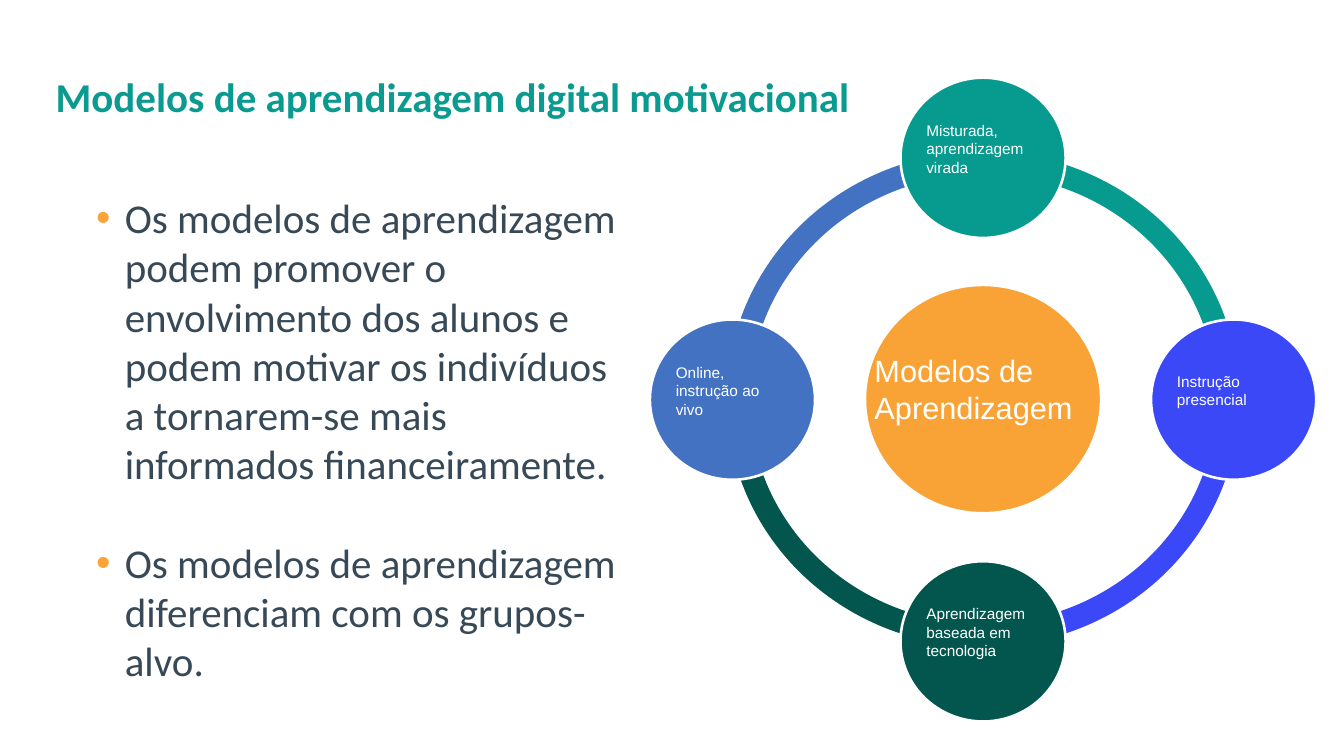
from dataclasses import dataclass

from lxml.etree import SubElement
from pptx import Presentation
from pptx.dml.color import RGBColor
from pptx.enum.shapes import MSO_SHAPE as Shape
from pptx.enum.text import MSO_ANCHOR as Anchor
from pptx.oxml.ns import qn
from pptx.util import Emu, Pt

SCALE = 9525  # EMU per px, 96 px to the inch
WHITE = RGBColor(0xFF, 0xFF, 0xFF)
TEAL = RGBColor(0x07, 0x9A, 0x8F)
TITLE = RGBColor(0x0A, 0x9A, 0x8F)
INDIGO = RGBColor(0x3A, 0x48, 0xF8)
GREEN = RGBColor(0x03, 0x56, 0x4E)
BLUE = RGBColor(0x43, 0x72, 0xC3)
ORANGE = RGBColor(0xF9, 0xA3, 0x37)
SLATE = RGBColor(0x37, 0x48, 0x56)
BULLET = RGBColor(0xFA, 0xA3, 0x37)

MID_X, MID_Y = 1024, 416
STEP_X, STEP_Y = 261, 252
QUARTER = 54  # 90 degrees in adjustment units


@dataclass(frozen=True)
class Box:
    x: int
    y: int
    w: int
    h: int

    def emu(self) -> tuple:
        return tuple(px(n) for n in (self.x, self.y, self.w, self.h))


@dataclass(frozen=True)
class Style:
    size: int
    font: str
    color: RGBColor
    bold: bool = False


@dataclass(frozen=True)
class Node:
    """A disc on the ring; turn counts the quarters where its arc starts."""
    text: str
    color: RGBColor
    col: int
    row: int
    turn: int


NODES = (
    Node("Misturada, aprendizagem virada", TEAL, 0, -1, 3),
    Node("Instrução presencial", INDIGO, 1, 0, 0),
    Node("Aprendizagem baseada em tecnologia", GREEN, 0, 1, 1),
    Node("Online, instrução ao vivo", BLUE, -1, 0, 2),
)
POINTS = (
    "Os modelos de aprendizagem podem promover o envolvimento dos alunos e "
    "podem motivar os indivíduos a tornarem-se mais informados financeiramente.",
    "Os modelos de aprendizagem diferenciam com os grupos-alvo.",
)
HEAD = Style(32, "Calibri", TITLE, True)
BODY = Style(32, "Calibri", SLATE)
HUB = Style(24, "Arial", WHITE)
LABEL = Style(12, "Arial", WHITE)


def px(n: int) -> Emu:
    return Emu(n * SCALE)


def around(x: int, y: int, w: int, h: int) -> Box:
    """Box of the given size centred on a point."""
    return Box(x - w // 2, y - h // 2, w, h)


def add_frame(slide, box: Box, pads: tuple, anchor: Anchor):
    frame = slide.shapes.add_textbox(*box.emu()).text_frame
    frame.word_wrap = True
    frame.vertical_anchor = anchor
    (frame.margin_left, frame.margin_top,
     frame.margin_right, frame.margin_bottom) = (px(n) for n in pads)
    return frame


def add_run(para, text: str, style: Style) -> None:
    run = para.add_run()
    run.text = text
    font = run.font
    font.size, font.name, font.bold = Pt(style.size), style.font, style.bold
    font.color.rgb = style.color


def add_bullet(para) -> None:
    props = para._p.get_or_add_pPr()
    props.set("marL", str(px(30)))
    props.set("indent", str(px(-30)))
    SubElement(SubElement(props, qn("a:buClr")), qn("a:srgbClr"), val=str(BULLET))
    SubElement(props, qn("a:buFont"), typeface="Arial")
    SubElement(props, qn("a:buChar"), char="•")


def add_label(slide, box: Box, text: str, style: Style, pad: int, lift: int) -> None:
    """Text in a disc, raised by a deeper bottom margin."""
    frame = add_frame(slide, box, (pad, pad, pad, pad + lift), Anchor.MIDDLE)
    add_run(frame.paragraphs[0], text, style)


def add_solid(slide, kind: Shape, box: Box, color: RGBColor):
    shape = slide.shapes.add_shape(kind, *box.emu())
    shape.shadow.inherit = False
    shape.fill.solid()
    shape.fill.fore_color.rgb = color
    shape.line.fill.background()
    return shape


def add_disc(slide, box: Box, color: RGBColor) -> None:
    disc = add_solid(slide, Shape.OVAL, box, color)
    disc.line.color.rgb = WHITE
    disc.line.width = Pt(2)


def add_arc(slide, node: Node) -> None:
    arc = add_solid(slide, Shape.BLOCK_ARC, around(MID_X, MID_Y, 534, 516), node.color)
    arc.adjustments[0] = node.turn * QUARTER
    arc.adjustments[1] = (node.turn + 1) % 4 * QUARTER
    arc.adjustments[2] = 0.046


def add_node(slide, node: Node) -> None:
    x, y = MID_X + node.col * STEP_X, MID_Y + node.row * STEP_Y
    add_disc(slide, around(x, y, 172, 167), node.color)
    add_label(slide, around(x, y, 122, 118), node.text, LABEL, 2, 18)


def add_title(slide) -> None:
    frame = add_frame(slide, Box(53, 65, 1294, 76), (5, 5, 5, 5), Anchor.MIDDLE)
    para = frame.paragraphs[0]
    para.line_spacing = 0.9
    add_run(para, "Modelos de aprendizagem digital motivacional", HEAD)


def add_points(slide) -> None:
    frame = add_frame(slide, Box(90, 196, 574, 549), (10, 5, 10, 5), Anchor.TOP)
    for i, text in enumerate(POINTS):
        para = frame.add_paragraph() if i else frame.paragraphs[0]
        if i:
            para.space_before = Pt(39)
        add_bullet(para)
        add_run(para, text, BODY)


def add_ring(slide) -> None:
    for node in reversed(NODES):
        add_arc(slide, node)
    add_disc(slide, around(MID_X, MID_Y, 246, 238), ORANGE)
    add_label(slide, around(MID_X, MID_Y + 7, 232, 168),
              "Modelos de Aprendizagem", HUB, 3, 35)
    for node in NODES:
        add_node(slide, node)


def main() -> None:
    deck = Presentation()
    deck.slide_width, deck.slide_height = px(1400), px(788)
    slide = deck.slides.add_slide(deck.slide_layouts[6])
    add_title(slide)
    add_points(slide)
    add_ring(slide)
    deck.save("out.pptx")


if __name__ == "__main__":
    main()
